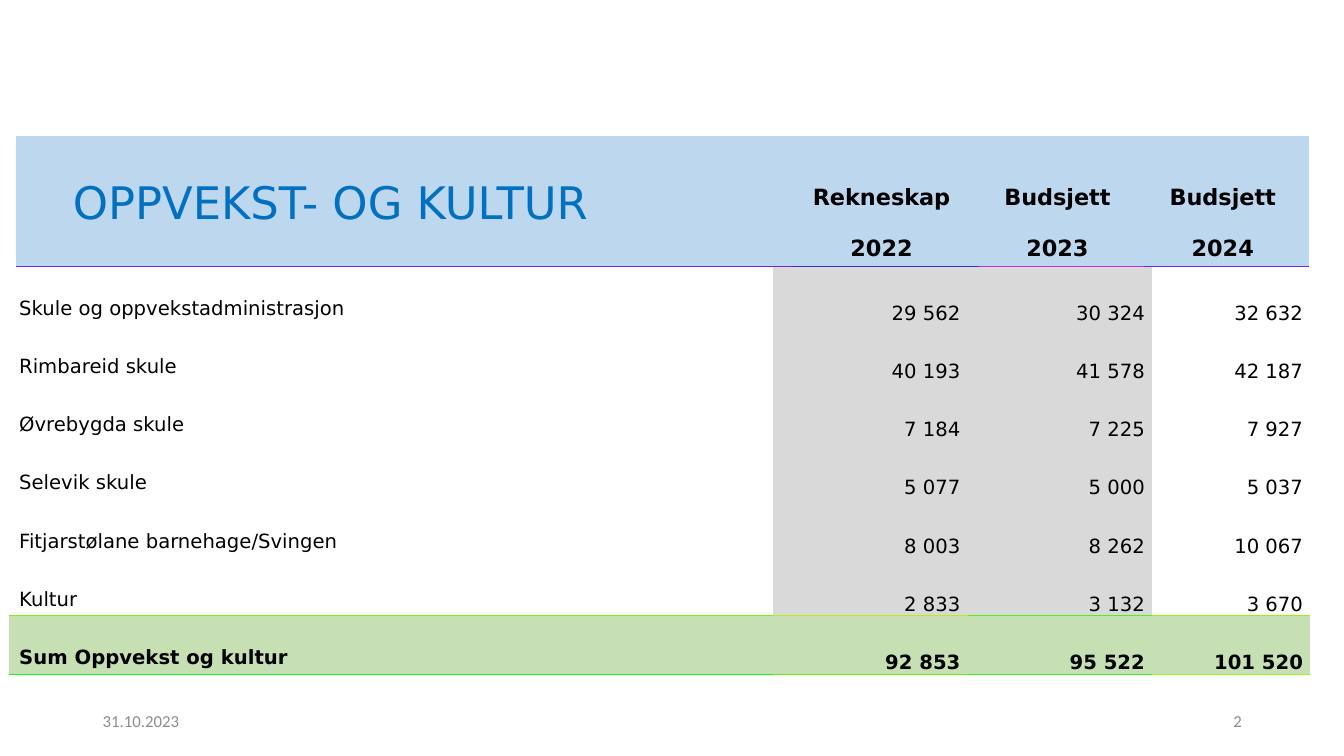
from pptx import Presentation
from pptx.dml.color import RGBColor
from pptx.enum.text import MSO_ANCHOR, PP_ALIGN
from pptx.oxml import parse_xml
from pptx.oxml.ns import nsdecls, qn
from pptx.util import Pt

THEME = {
    "head_fill": "BDD7EE", "past_fill": "D9D9D9", "sum_fill": "C6E0B4",
    "title": "0070C0", "text": "000000", "footer": "8C8C8C",
    "head_lines": ["7824DC", "4026DC", "C82BDC", "682BDC"],
    "sum_top_lines": ["80EC16", "B8ED16", "58ED16", "98EF16"],
    "sum_bottom_lines": ["18F116", "68EF16", "38F516", "98FB16"],
    "font": "DejaVu Sans", "footer_font": "Calibri",
    "title_size": 32, "head_size": 16, "body_size": 14, "footer_size": 12,
}
NO_STYLE = "{2D5ABB26-0587-4C30-8999-92F81FD0307C}"

HEADINGS = [["", "Rekneskap", "Budsjett", "Budsjett"],
            ["", "2022", "2023", "2024"]]
ACCOUNTS = [
    ["Skule og oppvekstadministrasjon", "29 562", "30 324", "32 632"],
    ["Rimbareid skule", "40 193", "41 578", "42 187"],
    ["Øvrebygda skule", "7 184", "7 225", "7 927"],
    ["Selevik skule", "5 077", "5 000", "5 037"],
    ["Fitjarstølane barnehage/Svingen", "8 003", "8 262", "10 067"],
    ["Kultur", "2 833", "3 132", "3 670"],
    ["Sum Oppvekst og kultur", "92 853", "95 522", "101 520"],
]


def write(holder, text, size, color, align, font=THEME["font"], bold=False):
    paragraph = holder.text_frame.paragraphs[0]
    paragraph.text = text
    paragraph.alignment = align
    paragraph.font.size = Pt(size)
    paragraph.font.name = font
    paragraph.font.bold = bold
    paragraph.font.color.rgb = RGBColor.from_string(color)


def fill_cell(cell, fill, top=None, bottom=None):
    cell.vertical_anchor = MSO_ANCHOR.BOTTOM
    for edge, color in (("lnT", top), ("lnB", bottom)):
        if color:
            cell._tc.get_or_add_tcPr().append(parse_xml(
                f'<a:{edge} {nsdecls("a")} w="{Pt(0.75)}"><a:solidFill>'
                f'<a:srgbClr val="{color}"/></a:solidFill></a:{edge}>'))
    if fill:
        cell.fill.solid()
        cell.fill.fore_color.rgb = RGBColor.from_string(fill)
    else:
        cell.fill.background()


deck = Presentation()
deck.slide_width, deck.slide_height = Pt(960), Pt(540)
slide = deck.slides.add_slide(deck.slide_layouts[6])

# Date and slide number
for left, text, align in ((66.24, "31.10.2023", PP_ALIGN.LEFT),
                          (678.24, "2", PP_ALIGN.RIGHT)):
    footer = slide.shapes.add_textbox(Pt(left), Pt(500.5), Pt(216), Pt(28.75))
    footer.text_frame.word_wrap = True
    footer.text_frame.vertical_anchor = MSO_ANCHOR.MIDDLE
    write(footer, text, THEME["footer_size"], THEME["footer"], align,
          THEME["footer_font"])

# Table frames: left, top, column widths, row heights
tables = []
for left, top, widths, heights in (
        (11.5, 97.2, [554.4, 133.2, 118.1, 118.1], [57, 36.5]),
        (6.5, 190.8, [545.75, 139, 131.75, 113], [41.55] * len(ACCOUNTS))):
    frame = slide.shapes.add_table(
        len(heights), len(widths), Pt(left), Pt(top),
        Pt(sum(widths)), Pt(sum(heights)))
    table = frame.table
    table.first_row = table.horz_banding = False
    next(frame._element.iter(qn("a:tableStyleId"))).text = NO_STYLE
    for column, width in zip(table.columns, widths):
        column.width = Pt(width)
    for row, height in zip(table.rows, heights):
        row.height = Pt(height)
    tables.append(table)
heading_table, account_table = tables

# Column headings
for r, headings in enumerate(HEADINGS):
    for c, heading in enumerate(headings):
        cell = heading_table.cell(r, c)
        fill_cell(cell, THEME["head_fill"],
                  bottom=THEME["head_lines"][c] if r == 1 else None)
        cell.margin_right = Pt(12.8)
        write(cell, heading, THEME["head_size"], THEME["text"],
              PP_ALIGN.CENTER, bold=True)

# Accounts, with the sum in the last row
sum_row = len(ACCOUNTS) - 1
for r, account in enumerate(ACCOUNTS):
    is_sum = r == sum_row
    for c, value in enumerate(account):
        cell = account_table.cell(r, c)
        top = bottom = None
        fill = THEME["past_fill"] if c in (1, 2) else None
        if is_sum:
            fill = THEME["sum_fill"]
            top = THEME["sum_top_lines"][c]
            bottom = THEME["sum_bottom_lines"][c]
        elif r == sum_row - 1:
            bottom = THEME["sum_top_lines"][c]
        fill_cell(cell, fill, top, bottom)
        if c:
            cell.margin_left = cell.margin_top = Pt(0.7)
            cell.margin_right, cell.margin_bottom = Pt(5.2), Pt(0)
        write(cell, value, THEME["body_size"], THEME["text"],
              PP_ALIGN.RIGHT if c else PP_ALIGN.LEFT, bold=is_sum)

# Title over the heading band
title = slide.shapes.add_textbox(Pt(-80.6), Pt(121), Pt(633.6), Pt(46))
title.text_frame.word_wrap = True
write(title, "OPPVEKST- OG KULTUR", THEME["title_size"], THEME["title"],
      PP_ALIGN.CENTER)

deck.save("out.pptx")
